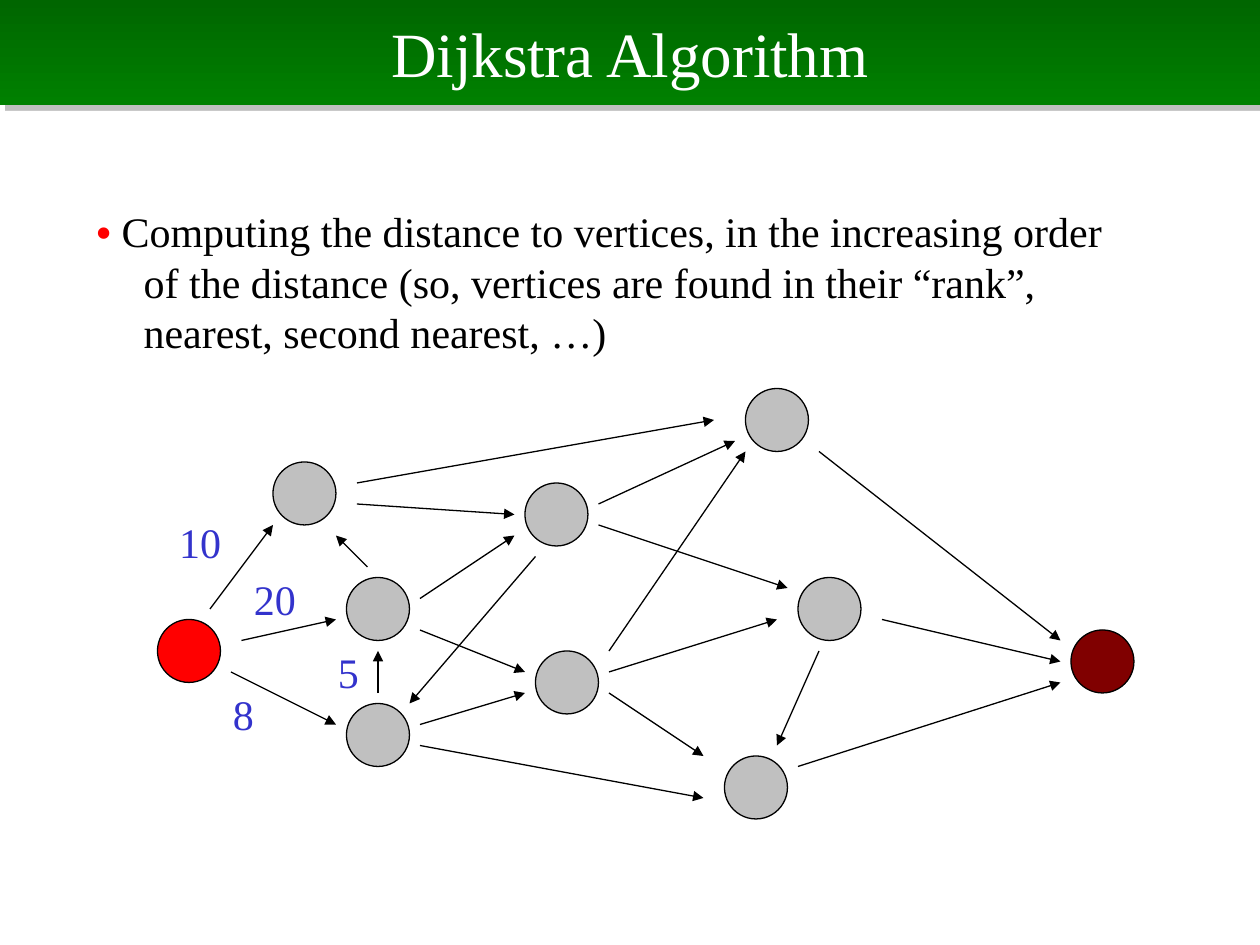
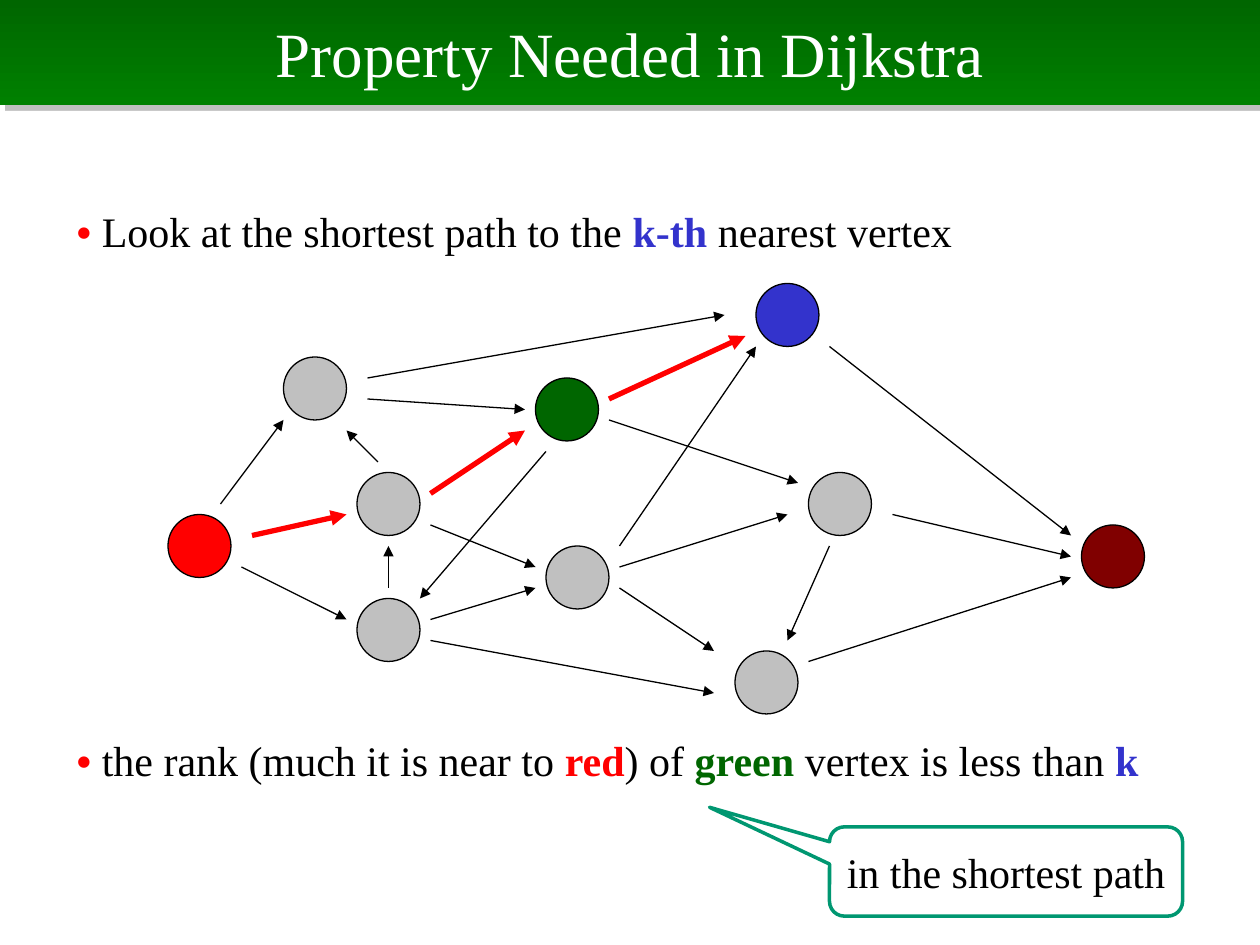
from dataclasses import dataclass

from lxml import etree
from pptx import Presentation
from pptx.dml.color import RGBColor
from pptx.enum.shapes import MSO_CONNECTOR, MSO_SHAPE
from pptx.enum.text import MSO_ANCHOR, PP_ALIGN
from pptx.oxml.ns import qn
from pptx.util import Emu, Pt

STRAIGHT = MSO_CONNECTOR.STRAIGHT
OVAL = MSO_SHAPE.OVAL
CALLOUT = MSO_SHAPE.ROUNDED_RECTANGULAR_CALLOUT
MIDDLE = MSO_ANCHOR.MIDDLE
CENTER = PP_ALIGN.CENTER

PX = 9525
WIDTH, HEIGHT = 960, 720
BAND = (0, 0, WIDTH, 80)
UNIT = 8
NODE_SIZE = 6 * UNIT
HANGING = 36


@dataclass(frozen=True)
class Theme:
    """Colours, font and type sizes of the deck."""
    font: str = "Times New Roman"
    title_size: int = 36
    body_size: int = 24
    body_leading: float = 28.8
    thin: float = 0.75
    thick: int = 3
    callout_line: int = 2
    black: str = "000000"
    white: str = "FFFFFF"
    red: str = "FF0000"
    maroon: str = "800000"
    blue: str = "3333CC"
    green: str = "006600"
    band_end: str = "008000"
    grey: str = "C0C0C0"
    shadow: str = "808080"
    teal: str = "009771"


THEME = Theme()

NODES = {
    "s": (0, 22), "a": (11, 7), "b": (18, 18), "c": (18, 30), "d": (35, 9),
    "e": (36, 25), "f": (56, 0), "g": (61, 18), "h": (54, 35), "t": (87, 23),
}
EDGES = {
    "sa": (5, 21, 11, 13), "sb": (8, 24, 17, 22), "sc": (7, 27, 17, 32),
    "ad": (19, 11, 34, 12), "af": (19, 9, 53, 3), "ba": (20, 17, 17, 14),
    "bd": (25, 20, 34, 14), "be": (25, 23, 35, 27), "cb": (21, 29, 21, 25),
    "ce": (25, 32, 35, 29), "ch": (25, 34, 52, 39), "dc": (36, 16, 24, 30),
    "df": (42, 11, 55, 5), "dg": (42, 13, 60, 19), "ef": (43, 25, 56, 6),
    "eg": (43, 27, 59, 22), "eh": (43, 29, 52, 35), "ft": (63, 6, 86, 24),
    "gh": (63, 25, 59, 34), "gt": (69, 22, 86, 26), "ht": (61, 36, 86, 28),
}
WEIGHTS = {"10": (7, 93), "20": (64, 136), "8": (48, 224), "5": (128, 192)}
END_COLORS = {"s": THEME.red, "t": THEME.maroon}


def px(*values):
    """Turn pixel lengths into EMU."""
    return [Emu(v * PX) for v in values]


def rgb(color):
    """Turn a hex string into a colour."""
    return RGBColor.from_string(color)


def set_font(font, size, color):
    """Give a font the deck's typeface with a size and colour."""
    font.name = THEME.font
    font.size = Pt(size)
    font.color.rgb = rgb(color)


def add_title(slide, text):
    """Turn the title placeholder into the green band with its shadow."""
    sp = slide.shapes.title
    sp.left, sp.top, sp.width, sp.height = px(*BAND)
    sp.fill.gradient()
    sp.fill.gradient_angle = 270
    for stop, color in zip(sp.fill.gradient_stops, (THEME.green, THEME.band_end)):
        stop.color.rgb = rgb(color)
    effects = etree.SubElement(sp._element.spPr, qn("a:effectLst"))
    shadow = etree.SubElement(effects, qn("a:outerShdw"), dist=str(Pt(4.2)),
                              dir="2700000", algn="ctr", rotWithShape="0")
    color = etree.SubElement(shadow, qn("a:srgbClr"), val=THEME.shadow)
    etree.SubElement(color, qn("a:alpha"), val="50000")
    tf = sp.text_frame
    tf.vertical_anchor = MIDDLE
    tf.text = text
    p = tf.paragraphs[0]
    p.alignment = CENTER
    set_font(p.font, THEME.title_size, THEME.white)


def add_bullet(slide, box, runs):
    """Add a hanging bullet line; coloured runs are bold."""
    tf = slide.shapes.add_textbox(*px(*box)).text_frame
    tf.word_wrap = True
    p = tf.paragraphs[0]
    p.line_spacing = Pt(THEME.body_leading)
    ppr = p._p.get_or_add_pPr()
    ppr.set("marL", str(HANGING * PX))
    ppr.set("indent", str(-HANGING * PX))
    for text, color in [("• ", THEME.red), *runs]:
        r = p.add_run()
        r.text = text
        set_font(r.font, THEME.body_size, color)
        r.font.bold = color != THEME.black


def add_edge(slide, ends, color, weight):
    """Add an arrow between two points."""
    line = slide.shapes.add_connector(STRAIGHT, *px(*ends))
    line.line.color.rgb = rgb(color)
    line.line.width = Pt(weight)
    etree.SubElement(line.line._get_or_add_ln(), qn("a:tailEnd"), type="triangle")
    etree.SubElement(line._element.spPr, qn("a:effectLst"))


def add_node(slide, left, top, color):
    """Add a vertex circle."""
    sp = slide.shapes.add_shape(OVAL, *px(left, top, NODE_SIZE, NODE_SIZE))
    sp.shadow.inherit = False
    sp.fill.solid()
    sp.fill.fore_color.rgb = rgb(color)
    sp.line.color.rgb = rgb(THEME.black)
    sp.line.width = Pt(THEME.thin)


def add_graph(slide, left, top, node_colors, route=()):
    """Draw the graph from its top-left corner, with the route in red."""
    for name, (x1, y1, x2, y2) in EDGES.items():
        ends = (left + x1 * UNIT, top + y1 * UNIT, left + x2 * UNIT, top + y2 * UNIT)
        style = (THEME.red, THEME.thick) if name in route else (THEME.black, THEME.thin)
        add_edge(slide, ends, *style)
    for name, (x, y) in NODES.items():
        add_node(slide, left + x * UNIT, top + y * UNIT, node_colors.get(name, THEME.grey))


def add_weights(slide, left, top):
    """Label the edges near the source with their lengths."""
    for text, (x, y) in WEIGHTS.items():
        width = 20 + 16 * len(text)
        tf = slide.shapes.add_textbox(*px(left + x, top + y, width, 48)).text_frame
        tf.word_wrap = False
        tf.text = text
        set_font(tf.paragraphs[0].font, THEME.body_size, THEME.blue)


def add_callout(slide, box, text):
    """Add a rounded callout pointing up and to the left."""
    sp = slide.shapes.add_shape(CALLOUT, *px(*box))
    sp.adjustments[0], sp.adjustments[1] = -0.84, -0.72
    sp.shadow.inherit = False
    sp.fill.solid()
    sp.fill.fore_color.rgb = rgb(THEME.white)
    sp.line.color.rgb = rgb(THEME.teal)
    sp.line.width = Pt(THEME.callout_line)
    tf = sp.text_frame
    tf.word_wrap = False
    tf.vertical_anchor = MIDDLE
    tf.text = text
    p = tf.paragraphs[0]
    p.alignment = CENTER
    set_font(p.font, THEME.body_size, THEME.black)


def add_algorithm_slide(prs):
    """Build the slide that introduces the algorithm."""
    slide = prs.slides.add_slide(prs.slide_layouts[5])
    add_title(slide, "Dijkstra Algorithm")
    add_bullet(slide, (64, 152, 816, 140), [
        ("Computing the distance to vertices, in the increasing order of the distance "
         "(so, vertices are found in their “rank”, nearest, second nearest, …)",
         THEME.black)])
    add_graph(slide, 120, 296, END_COLORS)
    add_weights(slide, 120, 296)


def add_property_slide(prs):
    """Build the slide on the property of the k-th nearest vertex."""
    slide = prs.slides.add_slide(prs.slide_layouts[5])
    add_title(slide, "Property Needed in Dijkstra")
    add_bullet(slide, (49, 152, 850, 48), [
        ("Look at the shortest path to the ", THEME.black),
        ("k-th ", THEME.blue),
        ("nearest vertex", THEME.black)])
    add_graph(slide, 128, 216, END_COLORS | {"d": THEME.green, "f": THEME.blue},
              route=("sb", "bd", "df"))
    add_bullet(slide, (49, 555, 850, 48), [
        ("the rank (much it is near to ", THEME.black),
        ("red", THEME.red),
        (") of ", THEME.black),
        ("green ", THEME.green),
        ("vertex is less than ", THEME.black),
        ("k", THEME.blue)])
    add_callout(slide, (632, 630, 269, 68), "in the shortest path")


def main():
    """Build the deck and save it."""
    prs = Presentation()
    prs.slide_width, prs.slide_height = px(WIDTH, HEIGHT)
    add_algorithm_slide(prs)
    add_property_slide(prs)
    prs.save("out.pptx")


if __name__ == "__main__":
    main()
